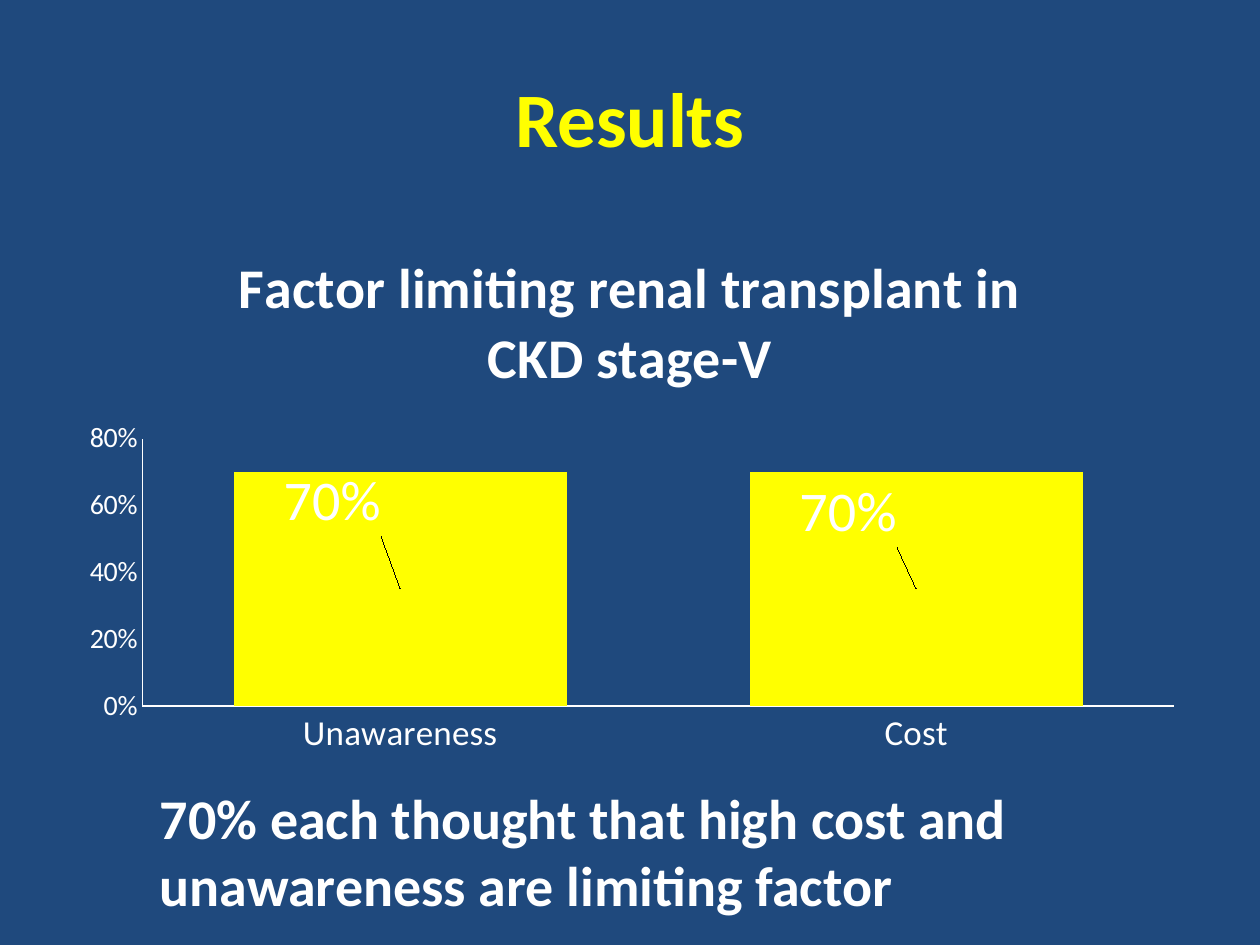
from lxml.etree import fromstring
from pptx import Presentation
from pptx.chart.data import CategoryChartData
from pptx.dml.color import RGBColor
from pptx.enum.chart import XL_CHART_TYPE, XL_TICK_MARK
from pptx.enum.text import MSO_ANCHOR, MSO_AUTO_SIZE, PP_ALIGN
from pptx.oxml.ns import nsdecls, qn
from pptx.util import Inches, Pt

NAVY = RGBColor(0x1F, 0x49, 0x7D)
YELLOW = RGBColor(0xFF, 0xFF, 0x00)
WHITE = RGBColor(0xFF, 0xFF, 0xFF)


def manual_layout(inner=False, **fractions):
    target = '<c:layoutTarget val="inner"/>' if inner else ""
    modes = '<c:xMode val="edge"/><c:yMode val="edge"/>' if inner else ""
    values = "".join(f'<c:{key} val="{value}"/>' for key, value in fractions.items())
    return fromstring(
        f'<c:layout {nsdecls("c")}><c:manualLayout>{target}{modes}{values}'
        "</c:manualLayout></c:layout>"
    )


class ResultsSlide:
    """Hold the text style and the slide, and add each kind of element."""

    def __init__(self, deck):
        self.slide = deck.slides.add_slide(deck.slide_layouts[5])
        fill = self.slide.background.fill
        fill.solid()
        fill.fore_color.rgb = NAVY

    def style(self, font, size, color=WHITE, bold=False):
        for name, value in {"name": "Calibri", "size": Pt(size), "bold": bold}.items():
            setattr(font, name, value)
        font.color.rgb = color

    def title(self, text, left, top, width, height):
        heading = self.slide.shapes.title
        box = {"left": left, "top": top, "width": width, "height": height}
        for name, value in box.items():
            setattr(heading, name, Inches(value))
        frame = heading.text_frame
        frame.text = text
        frame.vertical_anchor = MSO_ANCHOR.MIDDLE
        frame.paragraphs[0].alignment = PP_ALIGN.CENTER
        self.style(frame.paragraphs[0].runs[0].font, 44, YELLOW, True)

    def text(self, text, left, top, width, height):
        box = map(Inches, (left, top, width, height))
        frame = self.slide.shapes.add_textbox(*box).text_frame
        frame.word_wrap = True
        frame.auto_size = MSO_AUTO_SIZE.SHAPE_TO_FIT_TEXT
        frame.text = text
        self.style(frame.paragraphs[0].runs[0].font, 32, bold=True)

    def chart(self, heading, shares, label_shifts, left, top, width, height):
        data = CategoryChartData(number_format="0%")
        data.categories = list(shares)
        data.add_series("Series 1", list(shares.values()))
        box = map(Inches, (left, top, width, height))
        chart = self.slide.shapes.add_chart(
            XL_CHART_TYPE.COLUMN_STACKED, *box, data
        ).chart
        self.style(chart.font, 10)
        chart.has_legend = False
        chart.chart_title.text_frame.text = heading
        chart.chart_title.include_in_layout = False
        run = chart.chart_title.text_frame.paragraphs[0].runs[0]
        self.style(run.font, 32, bold=True)
        self.axes(chart)
        self.columns(chart.plots[0], label_shifts)
        plot_area = chart.plots[0]._element.getparent()
        for old_layout in plot_area.findall(qn("c:layout")):
            plot_area.remove(old_layout)
        plot_area.insert(0, manual_layout(True, x=0.07, y=0.4, w=0.91, h=0.49))

    def axes(self, chart):
        axis_format = {
            "major_tick_mark": XL_TICK_MARK.NONE,
            "minor_tick_mark": XL_TICK_MARK.NONE,
            "has_major_gridlines": False,
        }
        for axis, size in ((chart.category_axis, 20), (chart.value_axis, 16)):
            for name, value in axis_format.items():
                setattr(axis, name, value)
            self.style(axis.tick_labels.font, size)
            axis.format.line.color.rgb = WHITE
            axis.format.line.width = Pt(0.75)
        scale = {"minimum_scale": 0, "maximum_scale": 0.8, "major_unit": 0.2}
        for name, value in scale.items():
            setattr(chart.value_axis, name, value)
        chart.value_axis.tick_labels.number_format = "0%"
        chart.value_axis.tick_labels.number_format_is_linked = False

    def columns(self, plot, label_shifts):
        plot_format = {"gap_width": 55, "overlap": 100, "vary_by_categories": False}
        for name, value in plot_format.items():
            setattr(plot, name, value)
        series = plot.series[0]
        series.format.fill.solid()
        series.format.fill.fore_color.rgb = YELLOW
        labels = series.data_labels
        label_format = {
            "show_value": True,
            "number_format": "0%",
            "number_format_is_linked": False,
        }
        for name, value in label_format.items():
            setattr(labels, name, value)
        self.style(labels.font, 32)
        for index, (x, y) in enumerate(label_shifts):
            self.style(series.points[index].data_label.font, 32)
            label = labels._element.findall(qn("c:dLbl"))[index]
            number_format = fromstring(
                f'<c:numFmt {nsdecls("c")} formatCode="0%" sourceLinked="0"/>'
            )
            label.insert(1, manual_layout(x=x, y=y))
            label.insert(2, number_format)


def main():
    deck = Presentation()
    deck.slide_width, deck.slide_height = Inches(10), Inches(7.5)
    results = ResultsSlide(deck)
    results.title("Results", 0.5, 0.3, 9, 1.25)
    results.chart(
        "Factor limiting renal transplant in CKD stage-V",
        {"Unawareness": 0.7, "Cost": 0.7},
        [(-0.06, -0.16), (-0.06, -0.14)],
        0.5, 1.75, 9, 4.33,
    )
    results.text(
        "70% each thought that high cost and unawareness are limiting factor",
        1.17, 6.17, 8.5, 1.18,
    )
    deck.save("out.pptx")


if __name__ == "__main__":
    main()
